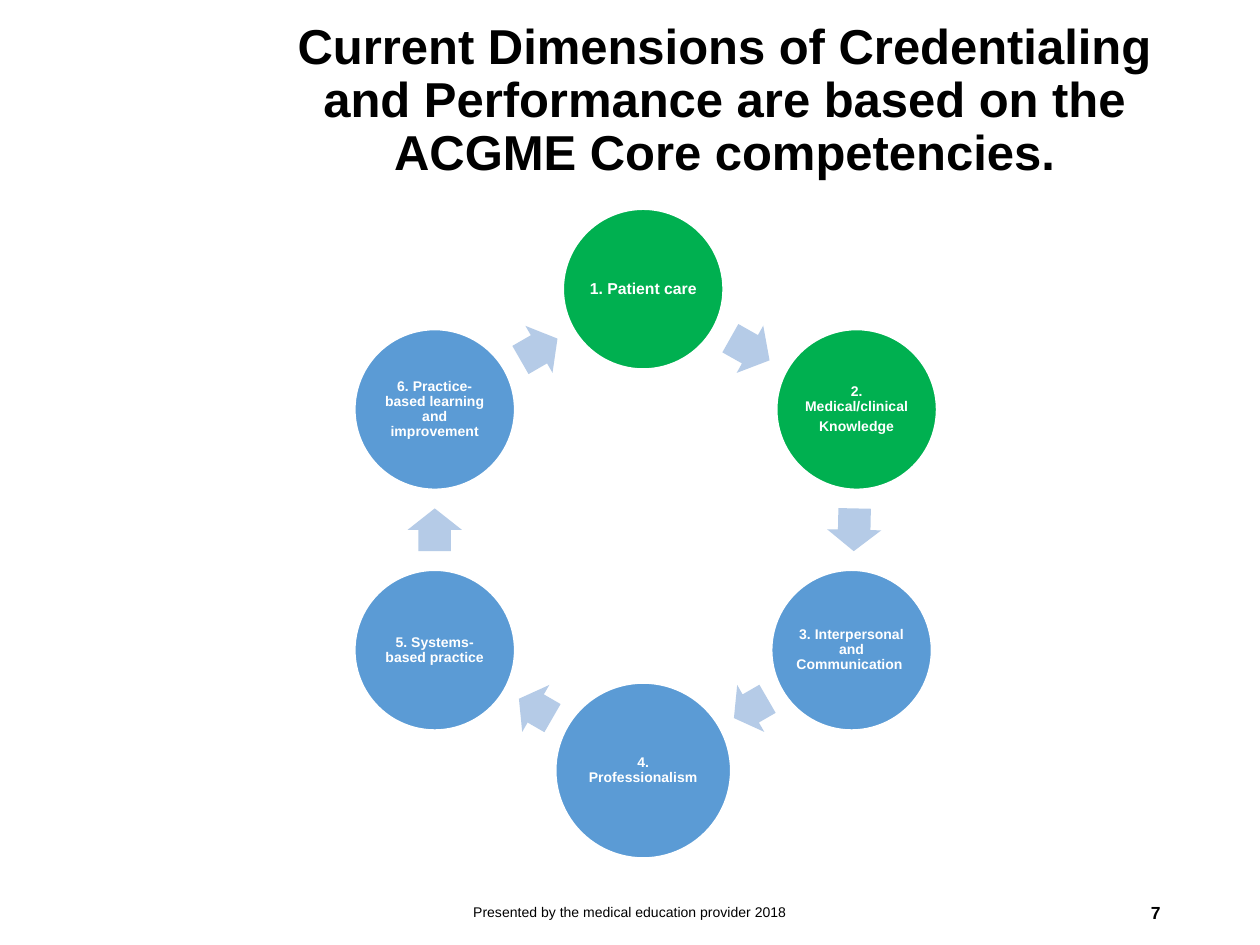
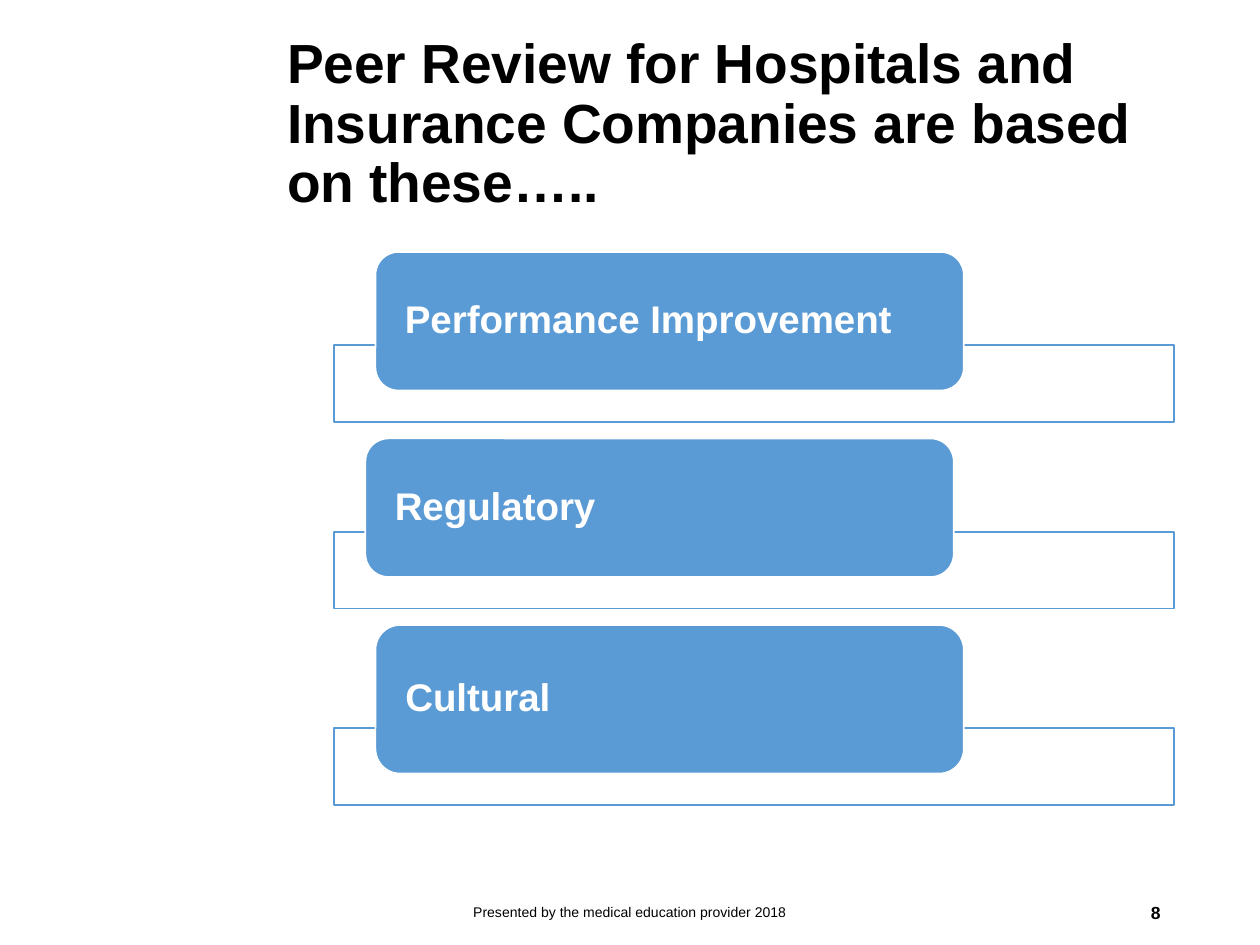
from math import atan2, cos, degrees, hypot, radians, sin

from lxml.etree import SubElement
from pptx import Presentation
from pptx.dml.color import RGBColor
from pptx.enum.shapes import MSO_SHAPE
from pptx.enum.text import MSO_ANCHOR, MSO_AUTO_SIZE, PP_ALIGN
from pptx.oxml.ns import qn
from pptx.util import Inches, Pt

BLACK = RGBColor(0x00, 0x00, 0x00)
WHITE = RGBColor(0xFF, 0xFF, 0xFF)
GREEN = RGBColor(0x00, 0xB0, 0x50)
BLUE = RGBColor(0x5B, 0x9B, 0xD5)
PALE_BLUE = RGBColor(0xB5, 0xCB, 0xE7)

FONT = "Arial"
FOOTER = "Presented by the medical education provider 2018"

# The slide is a grid of 100 columns by 75 rows of square cells
SLIDE_WIDTH, SLIDE_HEIGHT = Inches(10), Inches(7.5)
CELL = SLIDE_WIDTH / 100
TITLE_LEFT, TITLE_WIDTH = 21.8, 71.4

# Ring of competencies: text, fill, diameter, text size, shift to the right
RING_X, RING_Y, RING_RADIUS = 51.05, 42.05, 19.1
COMPETENCIES = [
    (["1. Patient care"], GREEN, 12.7, 9, 0),
    (["2. Medical/clinical", "Knowledge"], GREEN, 12.7, 8, 0.4),
    (["3. Interpersonal and Communication "], BLUE, 12.7, 8, 0),
    (["4. Professionalism"], BLUE, 13.9, 8, 0),
    (["5. Systems-based practice"], BLUE, 12.7, 8, 0),
    (["6. Practice-based learning and improvement"], BLUE, 12.7, 8, 0),
]
ARROW_SHARE, ARROW_HEIGHT = 0.53, 4.3

# Stack of review bases: text, left, height
REVIEW_BASES = [
    ("Performance Improvement", 29.8, 11),
    ("Regulatory", 29, 11),
    ("Cultural", 29.8, 11.8),
]
STACK_TOP, CARD_WIDTH = 20, 46.7
BAR_LEFT, BAR_WIDTH, BAR_HEIGHT = 26.5, 66.7, 6.1
CARD_OVERLAP, STACK_GAP = 3.6, 1.3


def cells(*counts):
    return [round(count * CELL) for count in counts]


def write(frame, lines, size, color, bold=False, align=PP_ALIGN.LEFT,
          spacing=None, after=0, insets=None):
    frame.word_wrap = True
    frame.auto_size = MSO_AUTO_SIZE.NONE
    frame.vertical_anchor = MSO_ANCHOR.MIDDLE
    if insets:
        side, edge = cells(*insets)
        frame.margin_left = frame.margin_right = side
        frame.margin_top = frame.margin_bottom = edge
    for number, line in enumerate(lines):
        paragraph = frame.add_paragraph() if number else frame.paragraphs[0]
        paragraph.alignment = align
        paragraph.line_spacing = spacing
        paragraph.space_after = Pt(after)
        run = paragraph.add_run()
        run.text = line
        run.font.name = FONT
        run.font.size = Pt(size)
        run.font.bold = bold
        run.font.color.rgb = color


def add_text(slide, box, text, size, **style):
    frame = slide.shapes.add_textbox(*cells(*box)).text_frame
    write(frame, [text], size, BLACK, **style)


def add_block(slide, preset, box, fill, line=None):
    block = slide.shapes.add_shape(preset, *cells(*box))
    block.shadow.inherit = False
    block.fill.solid()
    block.fill.fore_color.rgb = fill
    if line is None:
        block.line.fill.background()
    else:
        block.line.color.rgb = line
        block.line.width = Pt(1)
    return block


def add_framed_slide(deck, number, title, title_top, title_height, size, align):
    """Blank slide with the shared title, footer and page number."""
    slide = deck.slides.add_slide(deck.slide_layouts[6])
    add_text(slide, (TITLE_LEFT, title_top, TITLE_WIDTH, title_height), title,
             size, bold=True, align=align, spacing=0.9)
    add_text(slide, (33.1, 70.4, 33.8, 4), FOOTER, 8, align=PP_ALIGN.CENTER)
    add_text(slide, (70.6, 70.4, 22.5, 4), str(number), 10, bold=True,
             align=PP_ALIGN.RIGHT)
    return slide


def add_circle(slide, center, lines, fill, diameter, size):
    x, y = center
    box = (x - diameter / 2, y - diameter / 2, diameter, diameter)
    circle = add_block(slide, MSO_SHAPE.OVAL, box, fill, WHITE)
    write(circle.text_frame, lines, size, WHITE, bold=True,
          align=PP_ALIGN.CENTER, spacing=0.9, after=0.35 * size,
          insets=(0.1, 0.1))


def add_gap_arrow(slide, start, start_radius, end, end_radius):
    """Arrow in the middle of the gap between two circles."""
    dx, dy = end[0] - start[0], end[1] - start[1]
    distance = hypot(dx, dy)
    gap = distance - start_radius - end_radius
    share = (start_radius + gap / 2) / distance
    x, y = start[0] + dx * share, start[1] + dy * share
    length = gap * ARROW_SHARE
    box = (x - length / 2, y - ARROW_HEIGHT / 2, length, ARROW_HEIGHT)
    arrow = add_block(slide, MSO_SHAPE.RIGHT_ARROW, box, PALE_BLUE)
    arrow.adjustments[0], arrow.adjustments[1] = 0.6, 0.5
    arrow.rotation = degrees(atan2(dy, dx)) % 360


def add_ring(slide):
    step = 360 / len(COMPETENCIES)
    centers = []
    for number, (*_, shift) in enumerate(COMPETENCIES):
        angle = radians(number * step)
        centers.append((RING_X + RING_RADIUS * sin(angle) + shift,
                        RING_Y - RING_RADIUS * cos(angle)))
    for number, (lines, fill, diameter, size, _) in enumerate(COMPETENCIES):
        following = (number + 1) % len(COMPETENCIES)
        add_circle(slide, centers[number], lines, fill, diameter, size)
        add_gap_arrow(slide, centers[number], diameter / 2,
                      centers[following], COMPETENCIES[following][2] / 2)


def add_stack(slide):
    top = STACK_TOP
    for text, left, height in REVIEW_BASES:
        bar_top = top + height - CARD_OVERLAP
        bar = add_block(slide, MSO_SHAPE.RECTANGLE,
                        (BAR_LEFT, bar_top, BAR_WIDTH, BAR_HEIGHT), WHITE, BLUE)
        # Slightly transparent fill
        bar_color = bar.fill._xPr.find(qn("a:solidFill"))[0]
        SubElement(bar_color, qn("a:alpha")).set("val", "90000")
        card = add_block(slide, MSO_SHAPE.ROUNDED_RECTANGLE,
                         (left, top, CARD_WIDTH, height), BLUE, WHITE)
        write(card.text_frame, [text], 22, WHITE, bold=True, spacing=0.9,
              insets=(1.8, 0))
        top = bar_top + BAR_HEIGHT + STACK_GAP


def main():
    deck = Presentation()
    deck.slide_width, deck.slide_height = SLIDE_WIDTH, SLIDE_HEIGHT

    # Core competencies
    add_ring(add_framed_slide(
        deck, 7, "Current Dimensions of Credentialing and Performance are "
        "based on the ACGME Core competencies.", 3, 10.1, 28, PP_ALIGN.CENTER))

    # Bases of peer review
    add_stack(add_framed_slide(
        deck, 8, "Peer Review for Hospitals and Insurance Companies are "
        "based on these…..", 2.7, 14.5, 31.5, PP_ALIGN.LEFT))

    deck.save("out.pptx")


if __name__ == "__main__":
    main()
